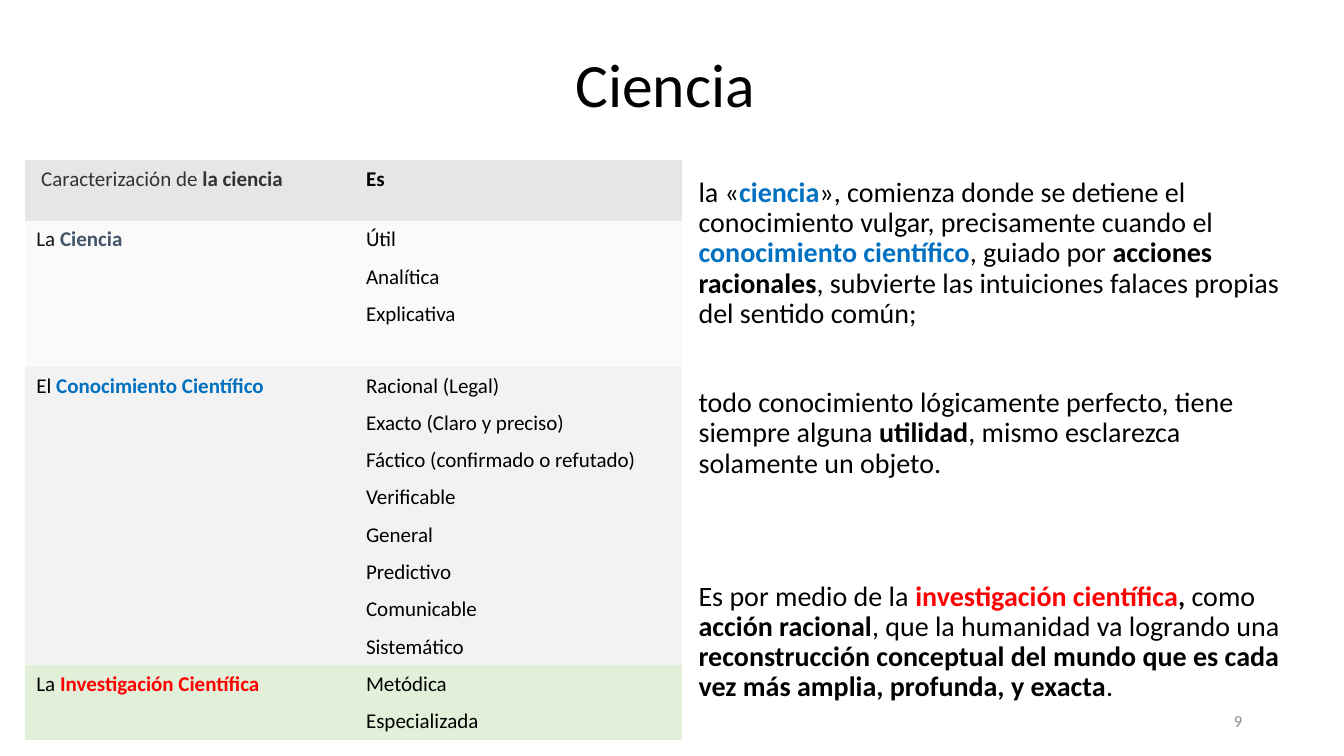
"""Build the slide on what characterises science."""
from dataclasses import dataclass

from pptx import Presentation
from pptx.dml.color import RGBColor
from pptx.enum.text import MSO_ANCHOR, PP_ALIGN
from pptx.oxml.ns import qn
from pptx.util import Emu, Inches, Pt

TOP, MIDDLE, BOTTOM = MSO_ANCHOR.TOP, MSO_ANCHOR.MIDDLE, MSO_ANCHOR.BOTTOM
LEFT, CENTER, RIGHT = PP_ALIGN.LEFT, PP_ALIGN.CENTER, PP_ALIGN.RIGHT
WIDTH, HEIGHT = Inches(13.33), Inches(7.5)
FONT = "Calibri"
BLACK, BLUE, RED, SLATE, GRAY = "000000", "0070C0", "FF0000", "44546A", "8C8C8C"
PLAIN_STYLE = "{2D5ABB26-0587-4C30-8999-92F81FD0307C}"
TABLE_SIZE = 15
COLUMN_SHARES = (24.53, 24.31)
ROW_SHARE, HEADER_SHARE, TALL_SHARE = 4.87, 8, 9.47


@dataclass(frozen=True)
class Span:
    text: str
    color: str = BLACK
    bold: bool = False


@dataclass(frozen=True)
class Para:
    spans: tuple[Span, ...]
    before: float = 0


@dataclass(frozen=True)
class TextBlock:
    area: tuple[float, float, float, float]
    paras: tuple[Para, ...]
    size: float
    align: PP_ALIGN = LEFT
    anchor: MSO_ANCHOR = TOP
    spacing: float = 0.9


@dataclass(frozen=True)
class Group:
    label: tuple[Span, ...]
    traits: tuple[Span, ...]
    fill: str
    last_row: float = ROW_SHARE


TITLE = TextBlock((6.9, 5.33, 86.25, 11.33), (Para((Span("Ciencia "),)),), 44, CENTER, BOTTOM)
NUMBER = TextBlock((70.67, 92.67, 22.5, 5.33), (Para((Span("9", GRAY),)),), 12, RIGHT, MIDDLE, 1)
BODY = TextBlock((51.24, 22.93, 46.66, 72.93), (
    Para((
        Span("la «"),
        Span("ciencia", BLUE, True),
        Span("», comienza donde se detiene el conocimiento vulgar, precisamente cuando el "),
        Span("conocimiento científico", BLUE, True),
        Span(", guiado por "),
        Span("acciones racionales", bold=True),
        Span(", subvierte las intuiciones falaces propias del sentido común;"),
    )),
    Para((
        Span("todo conocimiento lógicamente perfecto, tiene siempre alguna "),
        Span("utilidad", bold=True),
        Span(", mismo esclarezca solamente un objeto."),
    ), 42),
    Para((
        Span("Es por medio de la "),
        Span("investigación científica", RED, True),
        Span(", ", bold=True),
        Span("como "),
        Span("acción racional", bold=True),
        Span(", que la humanidad va logrando una "),
        Span("reconstrucción conceptual del mundo que es cada vez más amplia, profunda, y exacta",
             bold=True),
        Span("."),
    ), 73.5),
), 20)


def plain(*words: str) -> tuple[Span, ...]:
    return tuple(Span(word) for word in words)


GROUPS = (
    Group((Span(" "), Span("Caracterización de ", "333333"), Span("la ciencia", "333333", True)),
          (Span("Es", bold=True),), "E7E6E6", HEADER_SHARE),
    Group((Span("La ", "13151B"), Span("Ciencia", SLATE, True)),
          plain("Útil", "Analítica", "Explicativa"), "FAFAFA", TALL_SHARE),
    Group((Span("El "), Span("Conocimiento Científico", BLUE, True)),
          plain("Racional (Legal)", "Exacto (Claro y preciso)", "Fáctico (confirmado o refutado)",
                "Verificable", "General", "Predictivo", "Comunicable", "Sistemático"), "F2F2F2"),
    Group((Span("La "), Span("Investigación Científica", RED, True)),
          plain("Metódica", "Especializada"), "E2F0D9"),
)


def across(share: float) -> Emu:
    return Emu(round(WIDTH * share / 100))


def down(share: float) -> Emu:
    return Emu(round(HEIGHT * share / 100))


def rgb(color: str) -> RGBColor:
    return RGBColor.from_string(color)


def write_spans(paragraph, spans: tuple[Span, ...], size: float) -> None:
    for span in spans:
        run = paragraph.add_run()
        run.text = span.text
        run.font.name = FONT
        run.font.size = Pt(size)
        run.font.bold = span.bold
        run.font.color.rgb = rgb(span.color)


def draw_text(page, block: TextBlock) -> None:
    left, top, width, height = block.area
    box = page.shapes.add_textbox(across(left), down(top), across(width), down(height))
    frame = box.text_frame
    frame.word_wrap = True
    frame.vertical_anchor = block.anchor
    for index, para in enumerate(block.paras):
        paragraph = frame.add_paragraph() if index else frame.paragraphs[0]
        paragraph.alignment = block.align
        paragraph.line_spacing = block.spacing
        paragraph.space_before = Pt(para.before)
        write_spans(paragraph, para.spans, block.size)


def style_cell(cell, fill: str) -> None:
    cell.fill.solid()
    cell.fill.fore_color.rgb = rgb(fill)
    cell.margin_left = cell.margin_right = Inches(0.11)
    cell.margin_top = cell.margin_bottom = Inches(0 if cell.is_spanned else 0.06)


def draw_table(page, groups: tuple[Group, ...]) -> None:
    heights = [share for group in groups
               for share in [ROW_SHARE] * (len(group.traits) - 1) + [group.last_row]]
    holder = page.shapes.add_table(len(heights), len(COLUMN_SHARES), across(1.88), down(21.2),
                                   across(sum(COLUMN_SHARES)), down(sum(heights)))
    for style in holder.element.iter(qn("a:tableStyleId")):
        style.text = PLAIN_STYLE
    table = holder.table
    table.first_row = table.horz_banding = False
    for column, share in zip(table.columns, COLUMN_SHARES):
        column.width = across(share)
    for row, share in zip(table.rows, heights):
        row.height = down(share)
    first = 0
    for group in groups:
        last = first + len(group.traits) - 1
        label = table.cell(first, 0)
        if last > first:
            label.merge(table.cell(last, 0))
        write_spans(label.text_frame.paragraphs[0], group.label, TABLE_SIZE)
        for index, trait in enumerate(group.traits, first):
            value = table.cell(index, 1)
            write_spans(value.text_frame.paragraphs[0], (trait,), TABLE_SIZE)
            style_cell(table.cell(index, 0), group.fill)
            style_cell(value, group.fill)
        first = last + 1


def main() -> None:
    deck = Presentation()
    deck.slide_width, deck.slide_height = WIDTH, HEIGHT
    page = deck.slides.add_slide(deck.slide_layouts[6])
    draw_text(page, TITLE)
    draw_table(page, GROUPS)
    draw_text(page, BODY)
    draw_text(page, NUMBER)
    deck.save("out.pptx")


if __name__ == "__main__":
    main()
